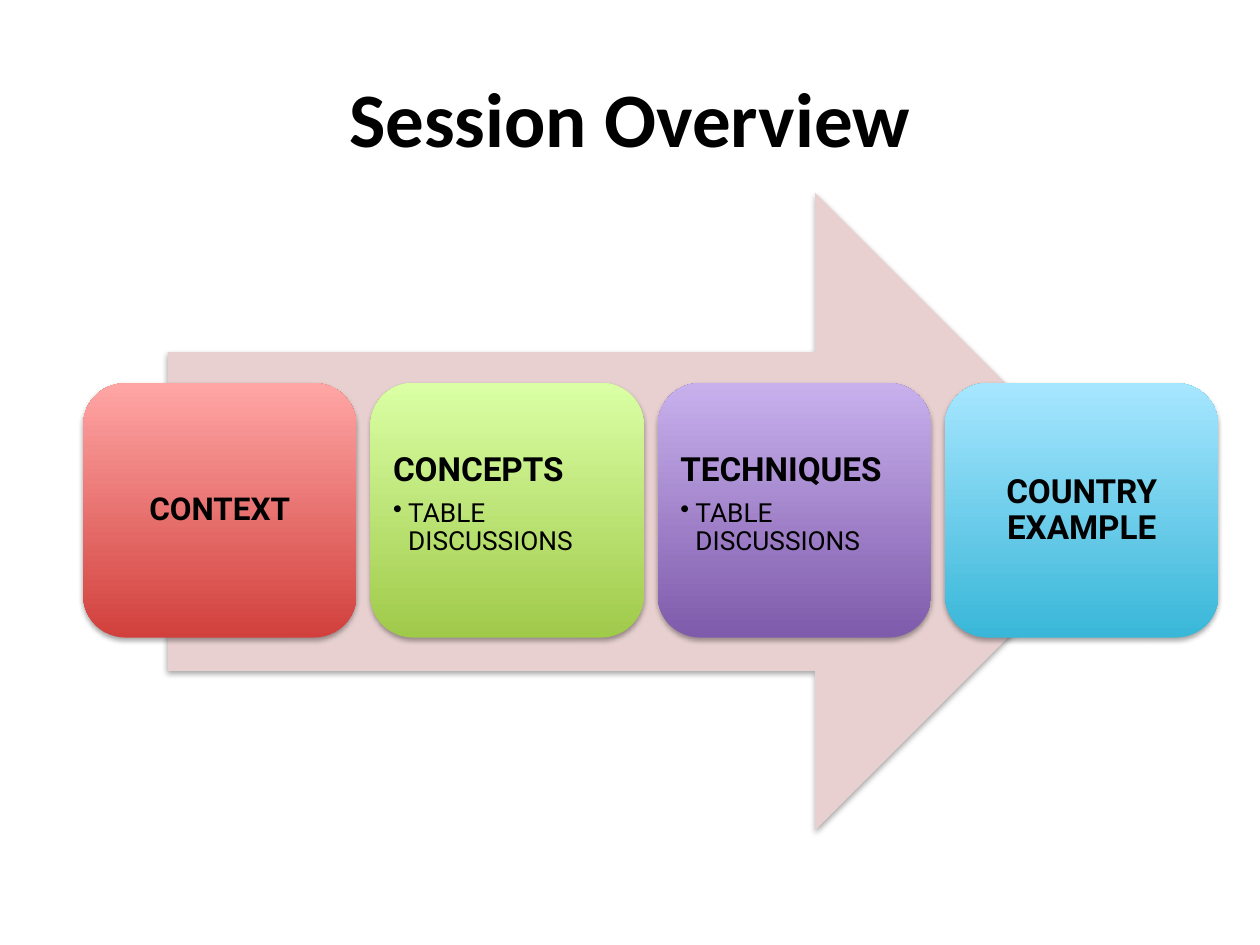
from lxml import etree
from pptx import Presentation
from pptx.dml.color import RGBColor
from pptx.enum.shapes import MSO_SHAPE
from pptx.enum.text import MSO_ANCHOR, PP_ALIGN
from pptx.oxml import parse_xml
from pptx.oxml.ns import qn
from pptx.util import Inches, Pt

ARROW, CARD = MSO_SHAPE.RIGHT_ARROW, MSO_SHAPE.ROUNDED_RECTANGLE
LEFT, CENTER = PP_ALIGN.LEFT, PP_ALIGN.CENTER
TOP, MIDDLE = MSO_ANCHOR.TOP, MSO_ANCHOR.MIDDLE

BLACK = RGBColor(0x00, 0x00, 0x00)
BLUSH = RGBColor(0xE8, 0xD0, 0xD0)
RED = RGBColor(0xD1, 0x40, 0x3C), RGBColor(0xFF, 0xA6, 0xA5)
GREEN = RGBColor(0xA0, 0xCA, 0x4A), RGBColor(0xDA, 0xFF, 0xA5)
PURPLE = RGBColor(0x7F, 0x5B, 0xAB), RGBColor(0xC8, 0xB0, 0xED)
BLUE = RGBColor(0x39, 0xB7, 0xD8), RGBColor(0xA7, 0xE6, 0xFF)

SHADOW = (
    '<a:outerShdw xmlns:a="http://schemas.openxmlformats.org/drawingml/2006/main"'
    ' blurRad="38100" dist="22860" dir="5400000" rotWithShape="0">'
    '<a:srgbClr val="000000"><a:alpha val="35000"/></a:srgbClr></a:outerShdw>'
)

# heading, heading size, sub-points, colours from bottom to top
STEPS = [
    ("CONTEXT", 18, [], RED),
    ("CONCEPTS", 19, ["TABLE DISCUSSIONS"], GREEN),
    ("TECHNIQUES", 19, ["TABLE DISCUSSIONS"], PURPLE),
    ("COUNTRY EXAMPLE", 19, [], BLUE),
]


class Deck:
    head_font, body_font = "Calibri", "Roboto"

    def __init__(self):
        self.prs = Presentation()
        self.prs.slide_width, self.prs.slide_height = Inches(10), Inches(7.5)
        self.slide = self.prs.slides.add_slide(self.prs.slide_layouts[5])

    def run(self, para, text, size, font, bold=True):
        run = para.add_run()
        run.text = text
        run.font.size, run.font.name, run.font.bold = Pt(size), font, bold
        run.font.color.rgb = BLACK

    def title(self, text, x, y, w, h):
        box = self.slide.shapes.title
        box.left, box.top, box.width, box.height = map(Inches, (x, y, w, h))
        frame = box.text_frame
        frame.vertical_anchor = MIDDLE
        para = frame.paragraphs[0]
        para.alignment = CENTER
        self.run(para, text, 44, self.head_font)

    def shape(self, kind, x, y, w, h):
        """Add an outline-free shape with a soft shadow below it."""
        shape = self.slide.shapes.add_shape(kind, *map(Inches, (x, y, w, h)))
        shape.line.fill.background()
        shape.shadow.inherit = False
        shape._element.spPr.find(qn("a:effectLst")).append(parse_xml(SHADOW))
        return shape

    def arrow(self, x, y, w, h):
        fill = self.shape(ARROW, x, y, w, h).fill
        fill.solid()
        fill.fore_color.rgb = BLUSH

    def card(self, x, y, w, h, tones):
        fill = self.shape(CARD, x, y, w, h).fill
        fill.gradient()
        fill.gradient_angle = 90
        for stop, tone in zip(fill.gradient_stops, tones):
            stop.color.rgb = tone

    def label(self, x, y, w, h, text, size, points):
        box = self.slide.shapes.add_textbox(*map(Inches, (x, y, w, h)))
        frame = box.text_frame
        frame.word_wrap = True
        frame.margin_left = frame.margin_right = Inches(0.08)
        frame.margin_bottom = Inches(0.08)
        frame.margin_top = Inches(0.45 if points else 0.08)
        frame.vertical_anchor = TOP if points else MIDDLE
        para = frame.paragraphs[0]
        para.alignment = LEFT if points else CENTER
        para.line_spacing = 0.9
        para.space_after = Pt(6.5 if points else 0)
        self.run(para, text, size, self.body_font)
        for point in points:
            self.bullet(frame.add_paragraph(), point)

    def bullet(self, para, text):
        para.level = 1
        para.line_spacing = 0.9
        props = para._p.get_or_add_pPr()
        props.set("marL", str(Inches(0.12)))
        props.set("indent", str(-Inches(0.12)))
        etree.SubElement(props, qn("a:buChar")).set("char", "•")
        self.run(para, text, 15, self.body_font, False)


def main():
    deck = Deck()
    deck.title("Session Overview", 0.5, 0.1, 9, 1.65)
    deck.arrow(1.33, 1.53, 7.67, 5.06)
    left, top, wide, high, gap, pad = 0.66, 3.04, 2.17, 2.02, 0.11, 0.1
    for i, (text, size, points, tones) in enumerate(STEPS):
        x = left + i * (wide + gap)
        deck.card(x, top, wide, high, tones)
        deck.label(x + pad, top + pad, wide - 2 * pad, high - 2 * pad,
                   text, size, points)
    deck.prs.save("out.pptx")


if __name__ == "__main__":
    main()
